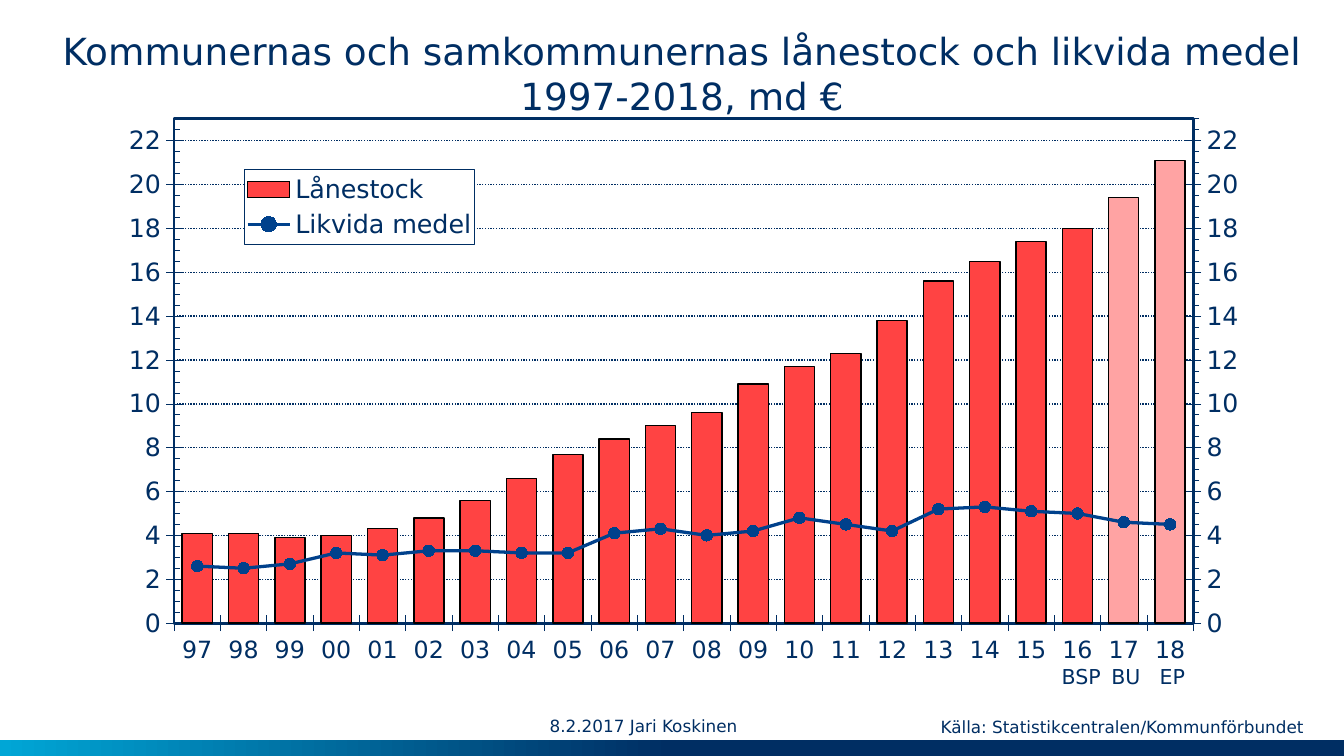
from copy import deepcopy

from pptx import Presentation
from pptx.chart.data import CategoryChartData
from pptx.dml.color import RGBColor
from pptx.enum.chart import (XL_CHART_TYPE, XL_LEGEND_POSITION,
                             XL_MARKER_STYLE, XL_TICK_MARK)
from pptx.enum.dml import MSO_LINE
from pptx.enum.shapes import MSO_SHAPE
from pptx.enum.text import MSO_ANCHOR, PP_ALIGN
from pptx.oxml import parse_xml
from pptx.oxml.ns import nsdecls, qn
from pptx.util import Inches, Pt

COLUMNS = XL_CHART_TYPE.COLUMN_CLUSTERED
CROSS, INSIDE = XL_TICK_MARK.CROSS, XL_TICK_MARK.INSIDE
DOTTED = MSO_LINE.ROUND_DOT
FONT = "DejaVu Sans"
COLORS = {"navy": "002E63", "cyan": "00A6D6", "red": "FF4343",
          "pink": "FFA3A3", "blue": "00418C", "black": "000000", "white": "FFFFFF"}
RGB = {name: RGBColor.from_string(value) for name, value in COLORS.items()}

prs = Presentation()
prs.slide_width, prs.slide_height = Inches(10), Inches(10 * 9 / 16)
s = prs.slides.add_slide(prs.slide_layouts[6])


def add_text(text, x, y, w, h, size, inset=True, wrap=True,
             align=PP_ALIGN.LEFT, anchor=MSO_ANCHOR.TOP):
    tf = s.shapes.add_textbox(Inches(x), Inches(y), Inches(w), Inches(h)).text_frame
    tf.word_wrap, tf.vertical_anchor = wrap, anchor
    if not inset:
        tf.margin_left = tf.margin_top = tf.margin_right = tf.margin_bottom = 0
    p = tf.paragraphs[0]
    p.alignment = align
    r = p.add_run()
    r.text = text
    r.font.size, r.font.name, r.font.color.rgb = Pt(size), FONT, RGB["navy"]


def set_layout(parent, index, target, x, y, w, h):
    """Place a chart part by fractions of the chart area."""
    for old in parent.findall(qn("c:layout")):
        parent.remove(old)
    parent.insert(index, parse_xml(
        f'<c:layout {nsdecls("c")}><c:manualLayout>{target}'
        '<c:xMode val="edge"/><c:yMode val="edge"/>'
        f'<c:x val="{x}"/><c:y val="{y}"/><c:w val="{w}"/><c:h val="{h}"/>'
        '</c:manualLayout></c:layout>'))


# Gradient footer band
band = s.shapes.add_shape(MSO_SHAPE.RECTANGLE, 0, Inches(5.51), Inches(10), Inches(0.12))
band.shadow.inherit = False
band.line.fill.background()
band.fill.gradient()
band.fill.gradient_angle = 180
for stop, position, name in zip(band.fill.gradient_stops, (0.5, 1), ("navy", "cyan")):
    stop.position, stop.color.rgb = position, RGB[name]

# Chart
data = CategoryChartData(number_format="0.0")
data.categories = [f"{year % 100:02d}" for year in range(1997, 2019)]
data.add_series("Lånestock", (4.1, 4.1, 3.9, 4, 4.3, 4.8, 5.6, 6.6, 7.7, 8.4, 9, 9.6,
                              10.9, 11.7, 12.3, 13.8, 15.6, 16.5, 17.4, 18, 19.4, 21.1))
data.add_series("Likvida medel", (2.6, 2.5, 2.7, 3.2, 3.1, 3.3, 3.3, 3.2, 3.2, 4.1, 4.3,
                                  4, 4.2, 4.8, 4.5, 4.2, 5.2, 5.3, 5.1, 5, 4.6, 4.5))
chart = s.shapes.add_chart(COLUMNS, Inches(0.79), Inches(0.79), Inches(8.56),
                           Inches(4.28), data).chart
chart.has_title = False
chart.font.name, chart.font.color.rgb = FONT, RGB["navy"]

cat_axis, val_axis = chart.category_axis, chart.value_axis
for axis, size in ((cat_axis, 12.7), (val_axis, 13.5)):
    axis.major_tick_mark = CROSS
    axis.format.line.color.rgb, axis.format.line.width = RGB["navy"], Pt(0.31)
    font = axis.tick_labels.font
    font.size, font.name, font.bold = Pt(size), FONT, False
    font.color.rgb = RGB["navy"]
val_axis.minimum_scale, val_axis.maximum_scale = 0, 23
val_axis.major_unit, val_axis.minor_unit = 2, 0.5
val_axis.minor_tick_mark = INSIDE
val_axis.tick_labels.number_format = "0"
val_axis.tick_labels.number_format_is_linked = False
grid = val_axis.major_gridlines.format.line
grid.color.rgb, grid.width, grid.dash_style = RGB["navy"], Pt(0.75), DOTTED

bars = chart.plots[0]
bars.gap_width, bars.vary_by_categories = 54, False
loans = bars.series[0]
for part, name in ((loans, "red"), (loans.points[20], "pink"), (loans.points[21], "pink")):
    part.format.fill.solid()
    part.format.fill.fore_color.rgb = RGB[name]
    part.format.line.color.rgb, part.format.line.width = RGB["black"], Pt(0.75)

# Move the second series to a line plot on the right axis
plot_area = chart._chartSpace.chart.plotArea
bar_xml = plot_area.find(qn("c:barChart"))
line_xml = parse_xml(
    f'<c:lineChart {nsdecls("c")}><c:grouping val="standard"/><c:varyColors val="0"/>'
    '<c:marker val="1"/><c:axId val="301"/><c:axId val="302"/></c:lineChart>')
ser = bar_xml.findall(qn("c:ser"))[1]
for invert in ser.findall(qn("c:invertIfNegative")):
    ser.remove(invert)
line_xml.insert(2, ser)
bar_xml.addnext(line_xml)

right_cat = deepcopy(plot_area.find(qn("c:catAx")))
right_val = deepcopy(plot_area.find(qn("c:valAx")))
right_val.remove(right_val.find(qn("c:majorGridlines")))
plot_area.find(qn("c:valAx")).addnext(right_cat)
right_cat.addnext(right_val)
for axis, settings in (
        (right_cat, {"axId": "301", "crossAx": "302", "delete": "1"}),
        (right_val, {"axId": "302", "crossAx": "301", "axPos": "r",
                     "minorTickMark": "out", "crosses": "max"})):
    for tag, value in settings.items():
        axis.find(qn(f"c:{tag}")).set("val", value)

liquid = chart.plots[1].series[0]
liquid.smooth = False
liquid.format.line.color.rgb, liquid.format.line.width = RGB["blue"], Pt(1.75)
marker = liquid.marker
marker.style, marker.size = XL_MARKER_STYLE.CIRCLE, 6
marker.format.fill.solid()
marker.format.fill.fore_color.rgb = RGB["blue"]
marker.format.line.color.rgb = RGB["blue"]

# Frame and legend
set_layout(plot_area, 0, '<c:layoutTarget val="inner"/>', 0.059, 0.022, 0.886, 0.877)
right_val.addnext(parse_xml(
    f'<c:spPr {nsdecls("c", "a")}><a:noFill/><a:ln w="{Pt(1.5)}"><a:solidFill>'
    f'<a:srgbClr val="{COLORS["navy"]}"/></a:solidFill></a:ln></c:spPr>'))
chart.has_legend = True
legend = chart.legend
legend.position, legend.include_in_layout = XL_LEGEND_POSITION.RIGHT, False
legend.font.size, legend.font.name, legend.font.bold = Pt(13.6), FONT, False
legend.font.color.rgb = RGB["navy"]
legend_xml = legend._element
set_layout(legend_xml, 1, "", 0.12, 0.11, 0.2, 0.13)
legend_xml.find(qn("c:txPr")).addprevious(parse_xml(
    f'<c:spPr {nsdecls("c", "a")}><a:solidFill><a:srgbClr val="{COLORS["white"]}"/>'
    f'</a:solidFill><a:ln w="{Pt(0.31)}"><a:solidFill>'
    f'<a:srgbClr val="{COLORS["navy"]}"/></a:solidFill></a:ln></c:spPr>'))

# Texts
add_text("8.2.2017 Jari Koskinen", 4.09, 5.29, 1.96, 0.22, 9, inset=False,
         anchor=MSO_ANCHOR.MIDDLE)
for label, x, w in (("BSP", 7.8, 0.51), ("BU", 8.17, 0.42), ("EP", 8.53, 0.39)):
    add_text(label, x, 4.89, w, 0.29, 11, wrap=False)
add_text("Kommunernas och samkommunernas lånestock och likvida medel 1997-2018, md €",
         0.35, 0.21, 9.45, 0.67, 20, inset=False, align=PP_ALIGN.CENTER)
add_text("Källa: Statistikcentralen/Kommunförbundet", 6.9, 5.28, 3.01, 0.25, 9)

prs.save("out.pptx")
